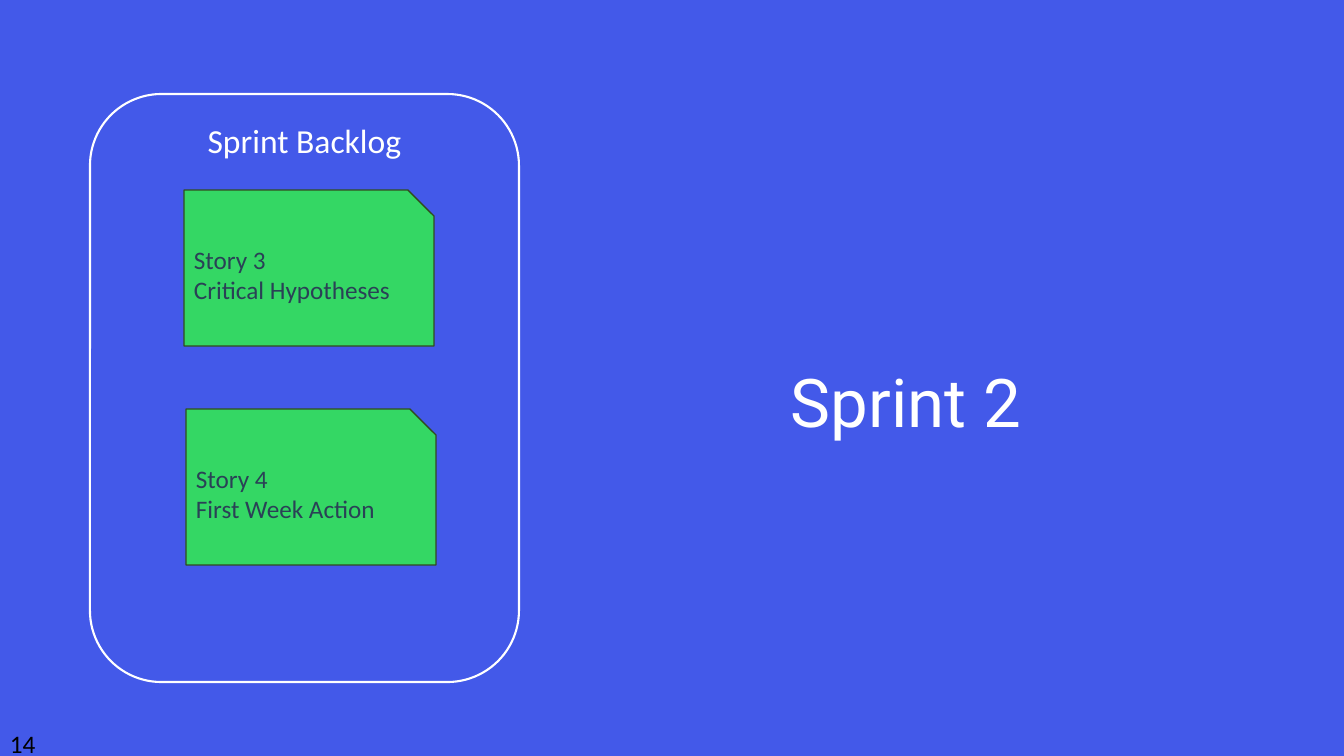
from pptx import Presentation
from pptx.dml.color import RGBColor
from pptx.enum.shapes import MSO_SHAPE
from pptx.enum.text import MSO_ANCHOR, MSO_AUTO_SIZE, PP_ALIGN
from pptx.util import Emu, Pt

PX = 914400 / 100.8  # EMU per px

THEME = {
    "blue": RGBColor(0x43, 0x59, 0xE9),
    "white": RGBColor(0xFF, 0xFF, 0xFF),
    "black": RGBColor(0x00, 0x00, 0x00),
    "green": RGBColor(0x34, 0xD7, 0x64),
    "card line": RGBColor(0x31, 0x4C, 0x1F),
    "card text": RGBColor(0x2A, 0x41, 0x56),
    "title font": "Roboto",
    "body font": "Calibri",
    "title size": Pt(48),
    "heading size": Pt(24),
    "text size": Pt(18),
}


def px(*lengths):
    return [Emu(round(length * PX)) for length in lengths]


def write(shape, text, size, color, align, anchor, font="body font"):
    frame = shape.text_frame
    frame.text = text
    frame_format = {"word_wrap": True, "auto_size": MSO_AUTO_SIZE.NONE,
                    "vertical_anchor": anchor}
    for name, value in frame_format.items():
        setattr(frame, name, value)
    font_format = {"name": THEME[font], "size": THEME[size]}
    for paragraph in frame.paragraphs:
        paragraph.alignment = align
        for run in paragraph.runs:
            for name, value in font_format.items():
                setattr(run.font, name, value)
            run.font.color.rgb = THEME[color]


presentation = Presentation()
presentation.slide_width, presentation.slide_height = px(1344, 756)
slide = presentation.slides.add_slide(presentation.slide_layouts[5])

# Background
slide.background.fill.solid()
slide.background.fill.fore_color.rgb = THEME["blue"]

# Sprint title
sprint = slide.shapes.title
sprint.left, sprint.top, sprint.width, sprint.height = px(562, 92, 688, 580)
write(sprint, "Sprint 2", "title size", "white", PP_ALIGN.CENTER,
      MSO_ANCHOR.MIDDLE, "title font")
sprint.text_frame.margin_top, = px(53)
sprint.text_frame.paragraphs[0].line_spacing = 0.9

# Page number
page_number = slide.shapes.add_textbox(*px(0, 723, 55, 33))
write(page_number, "14", "text size", "black", PP_ALIGN.LEFT, MSO_ANCHOR.TOP)

# Backlog panel and its story cards
boxes = [
    (MSO_SHAPE.ROUNDED_RECTANGLE, (90, 94, 429, 588), "blue", "white", 1.5,
     ("Sprint Backlog", "heading size", "white", PP_ALIGN.CENTER, MSO_ANCHOR.TOP)),
]
for left, top, story in [(186, 409, "Story 4\nFirst Week Action"),
                         (184, 190, "Story 3\nCritical Hypotheses")]:
    boxes.append(
        (MSO_SHAPE.SNIP_1_RECTANGLE, (left, top, 250, 156), "green", "card line", 1,
         (story, "text size", "card text", PP_ALIGN.LEFT, MSO_ANCHOR.MIDDLE)))

for outline, place, fill, line, weight, wording in boxes:
    box = slide.shapes.add_shape(outline, *px(*place))
    box.shadow.inherit = False
    box.fill.solid()
    box.fill.fore_color.rgb = THEME[fill]
    box.line.color.rgb = THEME[line]
    box.line.width = Pt(weight)
    write(box, *wording)

presentation.save("out.pptx")
